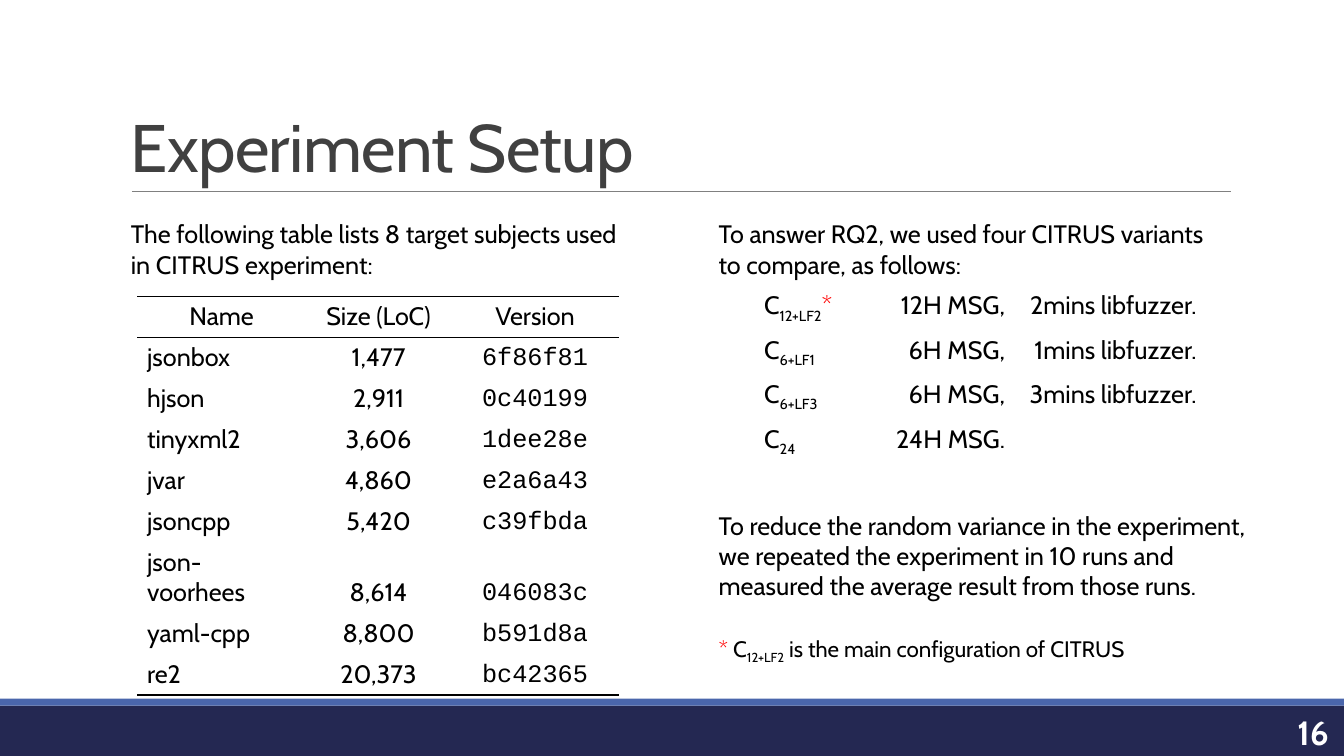
"""Build the Experiment Setup slide with its subject and variant tables."""
from dataclasses import dataclass

import pptx
import pptx.dml.color
import pptx.enum.shapes
import pptx.enum.text
import pptx.oxml
import pptx.oxml.ns
import pptx.util
from lxml import etree

Pt = pptx.util.Pt
Align = pptx.enum.text.PP_ALIGN
Anchor = pptx.enum.text.MSO_ANCHOR
Box = tuple[float, float, float, float]


@dataclass(frozen=True)
class Theme:
    font: str = "Cabin"
    code_font: str = "Courier New"
    navy: str = "242852"
    blue: str = "4A66AC"
    gray: str = "808080"
    title_color: str = "404040"
    black: str = "000000"
    white: str = "FFFFFF"
    red: str = "FF0000"
    title: float = 48
    number: float = 24
    body: float = 18
    note: float = 16
    no_table_style: str = "{2D5ABB26-0587-4C30-8999-92F81FD0307C}"


THEME = Theme()


@dataclass(frozen=True)
class Span:
    text: str
    size: float = THEME.body
    color: str = THEME.black
    font: str = THEME.font
    bold: bool = False
    subscript: bool = False


@dataclass(frozen=True)
class Line:
    spans: tuple[Span, ...]
    align: Align = Align.LEFT


@dataclass(frozen=True)
class TextBox:
    box: Box
    lines: tuple[Line, ...]
    anchor: Anchor = Anchor.TOP
    wrap: bool = True
    grow: bool = True


@dataclass(frozen=True)
class Cell:
    line: Line
    anchor: Anchor = Anchor.TOP
    borders: tuple[str, ...] = ()


@dataclass(frozen=True)
class Grid:
    left: float
    top: float
    widths: tuple[float, ...]
    rows: tuple[tuple[Cell, ...], ...]
    row_height: float = 29.2


def plain(text: str, align: Align = Align.LEFT, **style) -> Line:
    return Line((Span(text, **style),), align)


def configuration(suffix: str, size: float = THEME.body) -> tuple[Span, ...]:
    return Span("C", size), Span(suffix, size, subscript=True)


def write_line(paragraph, line: Line) -> None:
    paragraph.alignment = line.align
    for span in line.spans:
        run = paragraph.add_run()
        run.text = span.text
        run.font.name = span.font
        run.font.size = Pt(span.size)
        run.font.bold = span.bold
        run.font.color.rgb = pptx.dml.color.RGBColor.from_string(span.color)
        if span.subscript:
            run.font._element.set("baseline", "-25000")


def add_text(slide, item: TextBox):
    shape = slide.shapes.add_textbox(*map(Pt, item.box))
    frame = shape.text_frame
    frame.word_wrap = item.wrap
    frame.vertical_anchor = item.anchor
    sizing = pptx.enum.text.MSO_AUTO_SIZE
    frame.auto_size = sizing.SHAPE_TO_FIT_TEXT if item.grow else sizing.NONE
    for index, line in enumerate(item.lines):
        write_line(frame.add_paragraph() if index else frame.paragraphs[0], line)
    return shape


def add_bar(slide, box: Box, color: str) -> None:
    shape = slide.shapes.add_shape(pptx.enum.shapes.MSO_SHAPE.RECTANGLE, *map(Pt, box))
    shape.shadow.inherit = False
    shape.fill.solid()
    shape.fill.fore_color.rgb = pptx.dml.color.RGBColor.from_string(color)
    shape.line.fill.background()


def add_rule(slide, left: float, right: float, top: float) -> None:
    rule = slide.shapes.add_connector(
        pptx.enum.shapes.MSO_CONNECTOR.STRAIGHT, Pt(left), Pt(top), Pt(right), Pt(top))
    rule.line.color.rgb = pptx.dml.color.RGBColor.from_string(THEME.gray)
    rule.line.width = Pt(0.5)
    etree.SubElement(rule._element.spPr, pptx.oxml.ns.qn("a:effectLst"))


def add_border(cell, side: str) -> None:
    border = pptx.oxml.parse_xml(
        f'<a:{side} {pptx.oxml.ns.nsdecls("a")} w="{Pt(1)}"><a:solidFill>'
        f'<a:srgbClr val="{THEME.black}"/></a:solidFill></a:{side}>')
    properties = cell._tc.get_or_add_tcPr()
    fill = properties.find(pptx.oxml.ns.qn("a:noFill"))
    fill.addprevious(border)


def add_grid(slide, grid: Grid) -> None:
    frame = slide.shapes.add_table(
        len(grid.rows), len(grid.widths), Pt(grid.left), Pt(grid.top),
        Pt(sum(grid.widths)), Pt(grid.row_height * len(grid.rows)))
    table = frame.table
    table.first_row = table.horz_banding = False
    table._tbl.tblPr[0].text = THEME.no_table_style
    for column, width in zip(table.columns, grid.widths):
        column.width = Pt(width)
    for row, content in zip(table.rows, grid.rows):
        row.height = Pt(grid.row_height)
        for cell, item in zip(row.cells, content):
            cell.fill.background()
            cell.vertical_anchor = item.anchor
            write_line(cell.text_frame.paragraphs[0], item.line)
            for side in item.borders:
                add_border(cell, side)


SUBJECTS = (
    ("jsonbox", "1,477", "6f86f81"), ("hjson", "2,911", "0c40199"),
    ("tinyxml2", "3,606", "1dee28e"), ("jvar", "4,860", "e2a6a43"),
    ("jsoncpp", "5,420", "c39fbda"), ("json-voorhees", "8,614", "046083c"),
    ("yaml-cpp", "8,800", "b591d8a"), ("re2", "20,373", "bc42365"),
)
VARIANTS = (
    ("12+LF2", "12H MSG,", "2mins libfuzzer."), ("6+LF1", "6H MSG,", "1mins libfuzzer."),
    ("6+LF3", "6H MSG,", "3mins libfuzzer."), ("24", "24H MSG.", ""),
)
MAIN_VARIANT = "12+LF2"


def subject_rows() -> tuple[tuple[Cell, ...], ...]:
    rows = [tuple(Cell(plain(text, Align.CENTER), borders=("lnT", "lnB"))
                  for text in ("Name", "Size (LoC)", "Version"))]
    for subject in SUBJECTS:
        name, size, version = subject
        lines = (plain(name), plain(size, Align.CENTER),
                 plain(version, Align.CENTER, font=THEME.code_font))
        borders = ("lnB",) if subject == SUBJECTS[-1] else ()
        rows.append(tuple(Cell(line, Anchor.BOTTOM, borders) for line in lines))
    return tuple(rows)


def variant_rows() -> tuple[tuple[Cell, ...], ...]:
    rows = []
    for suffix, generation, fuzzing in VARIANTS:
        star = (Span("*", color=THEME.red),) if suffix == MAIN_VARIANT else ()
        last = plain(fuzzing, Align.RIGHT) if fuzzing else Line(())
        lines = (Line(configuration(suffix) + star), plain(generation, Align.RIGHT), last)
        rows.append(tuple(map(Cell, lines)))
    return tuple(rows)


def main() -> None:
    presentation = pptx.Presentation()
    presentation.slide_width, presentation.slide_height = Pt(960), Pt(540)
    slide = presentation.slides.add_slide(presentation.slide_layouts[6])
    add_bar(slide, (0, 504, 960, 36), THEME.navy)
    add_bar(slide, (0, 499, 960, 5), THEME.blue)
    add_rule(slide, 94.3, 879, 136.8)
    title = add_text(slide, TextBox(
        (86.4, 22.3, 792, 114.5),
        (plain("Experiment Setup", size=THEME.title, color=THEME.title_color),),
        Anchor.BOTTOM, grow=False))
    heading = title.text_frame.paragraphs[0]
    heading.line_spacing = 0.85
    heading.runs[0].font._element.set("spc", "-50")
    add_grid(slide, Grid(97.9, 211.7, (120.8, 103.5, 120), subject_rows()))
    add_grid(slide, Grid(538.6, 203.8, (75.6, 110.9, 136.8), variant_rows()))
    note = (Span("* ", THEME.note, THEME.red), *configuration(MAIN_VARIANT, THEME.note),
            Span(" is the main configuration of CITRUS", THEME.note))
    for item in (
        TextBox((853.2, 508.3, 103, 28.8), (plain(
            "16", Align.RIGHT, size=THEME.number, color=THEME.white, bold=True),),
            Anchor.MIDDLE, grow=False),
        TextBox((86.4, 152.6, 367.2, 51), (plain(
            "The following table lists 8 target subjects used in CITRUS experiment:"),)),
        TextBox((506.2, 152.6, 367.2, 51), (plain(
            "To answer RQ2, we used four CITRUS variants to compare, as follows:"),)),
        TextBox((506.2, 360.7, 409.7, 72.7), (
            plain("To reduce the random variance in the experiment,"),
            plain("we repeated the experiment in 10 runs and measured "
                  "the average result from those runs."))),
        TextBox((506.2, 450, 317.5, 26.6), (Line(note),), wrap=False),
    ):
        add_text(slide, item)
    presentation.save("out.pptx")


if __name__ == "__main__":
    main()
